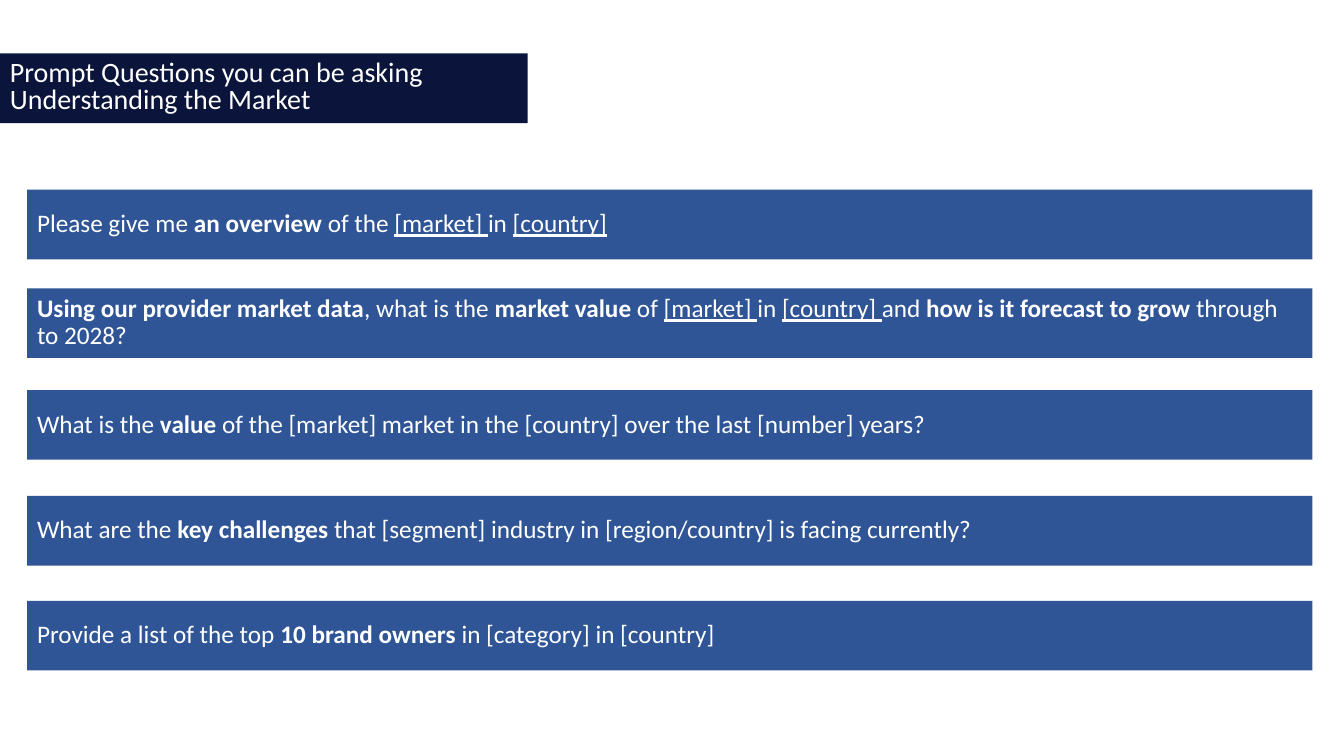
from pptx import Presentation
from pptx.dml.color import RGBColor
from pptx.enum.shapes import MSO_SHAPE as Shape
from pptx.enum.text import MSO_ANCHOR as Anchor, PP_ALIGN as Align
from pptx.util import Pt

# Content: each paragraph is a list of (text, style); "b" is bold, "u" underlined
TITLE = [
    [("Prompt Questions you can be asking", "")],
    [("Understanding the Market", "")],
]
QUESTIONS = [  # (top, spans)
    (135.4, [("Please give me ", ""), ("an overview", "b"), (" of the ", ""),
             ("[market] ", "u"), ("in ", ""), ("[country]", "u")]),
    (205.9, [("Using our provider market data", "b"), (", what is the ", ""),
             ("market value", "b"), (" of ", ""), ("[market] ", "u"), ("in ", ""),
             ("[country] ", "u"), ("and ", ""), ("how is it forecast to grow", "b"),
             (" through to 2028?", "")]),
    (278.6, [("What is the ", ""), ("value", "b"),
             (" of the [market] market in the [country] over the last [number] years?", "")]),
    (354.2, [("What are the ", ""), ("key challenges", "b"),
             (" that [segment] industry in [region/country] is facing currently?", "")]),
    (429.1, [("Provide a list of the top ", ""), ("10 brand owners", "b"),
             (" in [category] in [country]", "")]),
]


class Theme:
    font = "Calibri"
    title_size, question_size = 20, 18
    text = RGBColor.from_string("FFFFFF")
    title_fill = RGBColor.from_string("0B153B")
    question_fill = RGBColor.from_string("2F5597")


BAR_HEIGHT = 49.8


def add_bar(page, left, top, width, fill, size, line_spacing, paragraphs):
    box = page.shapes.add_shape(Shape.RECTANGLE, Pt(left), Pt(top), Pt(width), Pt(BAR_HEIGHT))
    box.shadow.inherit = False
    box.fill.solid()
    box.fill.fore_color.rgb = fill
    box.line.fill.background()
    frame = box.text_frame
    frame.word_wrap = True
    frame.vertical_anchor = Anchor.MIDDLE
    for index, spans in enumerate(paragraphs):
        para = frame.add_paragraph() if index else frame.paragraphs[0]
        para.alignment = Align.LEFT
        para.line_spacing = line_spacing
        para.font.name = Theme.font
        para.font.size = Pt(size)
        para.font.color.rgb = Theme.text
        for text, style in spans:
            span = para.add_run()
            span.text = text
            if style == "b":
                span.font.bold = True
            elif style == "u":
                span.font.underline = True


deck = Presentation()
deck.slide_width, deck.slide_height = Pt(960), Pt(540)
page = deck.slides.add_slide(deck.slide_layouts[6])

# Title bar
add_bar(page, 0, 38.2, 377, Theme.title_fill, Theme.title_size, 0.8, TITLE)

# Question bars
for top, spans in QUESTIONS:
    add_bar(page, 19.4, top, 918, Theme.question_fill, Theme.question_size, 0.9, [spans])

deck.save("out.pptx")
